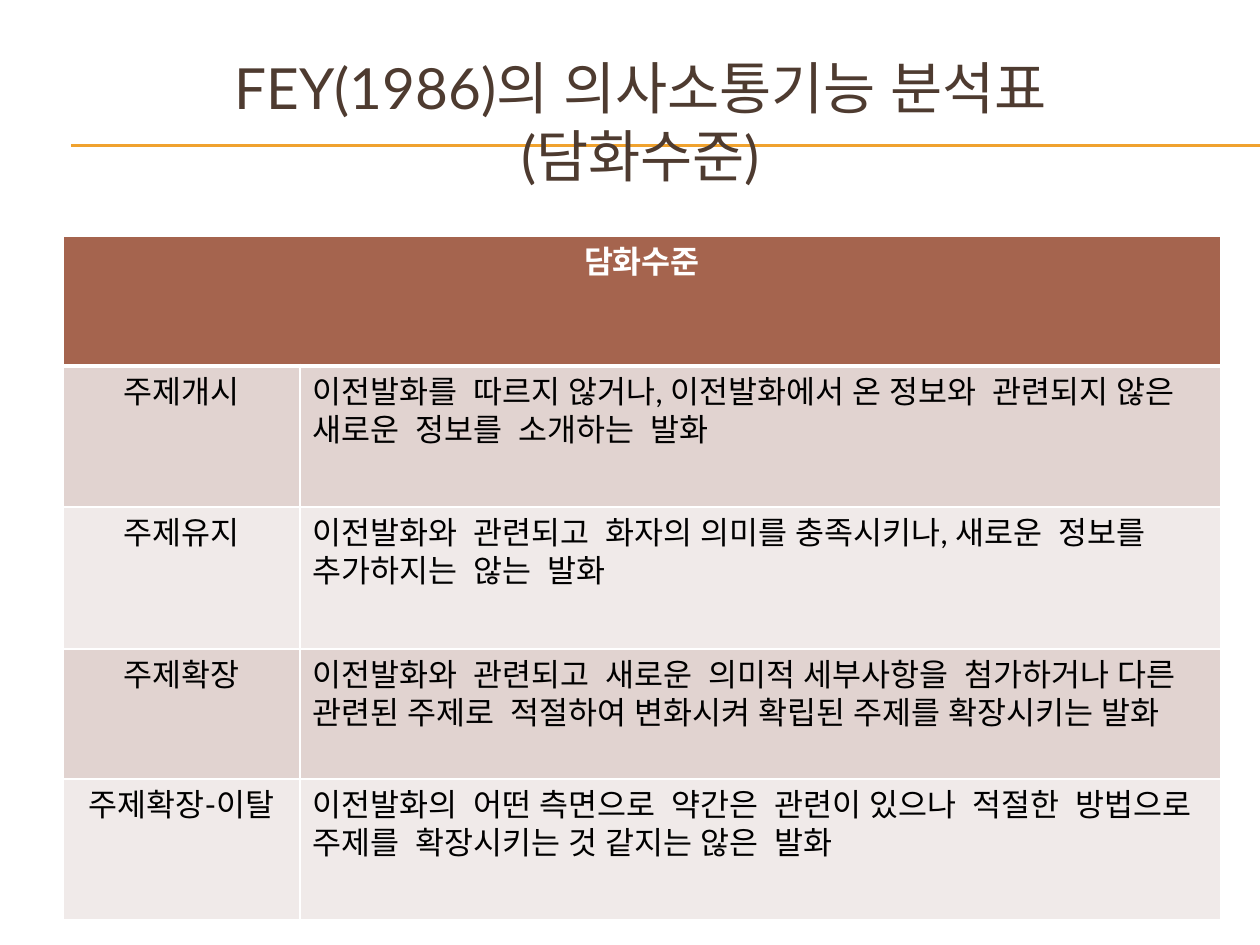
from dataclasses import dataclass

from lxml import etree
from pptx import Presentation
from pptx import util as u
from pptx.dml.color import RGBColor
from pptx.enum import shapes, text
from pptx.oxml.ns import qn

PX = u.Inches(1) // 126
CENTER, LEFT = text.PP_ALIGN.CENTER, text.PP_ALIGN.LEFT


@dataclass(frozen=True)
class Theme:
    font: str = "Lato"
    title: str = "4E3B30"
    rule: str = "F0A22E"
    header: str = "A5644E"
    bands: tuple = ("E1D3D0", "F0EAE9")
    ink: str = "000000"
    white: str = "FFFFFF"
    title_pt: float = 32.4
    body_pt: int = 18
    rule_pt: float = 0.75
    border_pt: int = 1
    header_border_pt: int = 3


class Deck:
    """Holds the theme and the current slide."""

    def __init__(self, theme, width, height):
        self.t = theme
        self.prs = Presentation()
        self.prs.slide_width, self.prs.slide_height = width * PX, height * PX
        self.s = self.prs.slides.add_slide(self.prs.slide_layouts[6])

    def run(self, p, words, size, color, bold=False):
        """Add a run with one font for both Latin and Korean text."""
        r = p.add_run()
        r.text = words
        r.font.name, r.font.size, r.font.bold = self.t.font, u.Pt(size), bold
        r.font.color.rgb = RGBColor.from_string(color)
        etree.SubElement(r._r.get_or_add_rPr(), qn("a:ea"), typeface=self.t.font)

    def rule(self, x1, x2, y):
        ln = self.s.shapes.add_connector(
            shapes.MSO_CONNECTOR.STRAIGHT, x1 * PX, y * PX, x2 * PX, y * PX)
        ln.line.color.rgb = RGBColor.from_string(self.t.rule)
        ln.line.width = u.Pt(self.t.rule_pt)
        etree.SubElement(ln._element.spPr, qn("a:effectLst"))

    def title(self, lines, x, y, w, h):
        tf = self.s.shapes.add_textbox(x * PX, y * PX, w * PX, h * PX).text_frame
        tf.word_wrap = True
        tf.vertical_anchor = text.MSO_ANCHOR.MIDDLE
        p = tf.paragraphs[0]
        p.alignment = CENTER
        for i, line in enumerate(lines):
            if i:
                p.add_line_break()
            self.run(p, line, self.t.title_pt, self.t.title)

    def table(self, x, y, col_widths, row_heights):
        frame = self.s.shapes.add_table(
            len(row_heights), len(col_widths), x * PX, y * PX,
            sum(col_widths) * PX, sum(row_heights) * PX)
        tbl = frame.table
        for col, width in zip(tbl.columns, col_widths):
            col.width = width * PX
        for row, height in zip(tbl.rows, row_heights):
            row.height = height * PX
        return tbl

    def cell(self, cell, fill, words="", color=None, align=LEFT, bold=False,
             bottom_pt=None):
        cell.fill.solid()
        cell.fill.fore_color.rgb = RGBColor.from_string(fill)
        self.borders(cell, bottom_pt or self.t.border_pt)
        if words:
            p = cell.text_frame.paragraphs[0]
            p.alignment = align
            self.run(p, words, self.t.body_pt, color or self.t.ink, bold)

    def borders(self, cell, bottom_pt):
        tc_pr = cell._tc.get_or_add_tcPr()
        for i, side in enumerate("LRTB"):
            width = bottom_pt if side == "B" else self.t.border_pt
            ln = etree.Element(qn(f"a:ln{side}"), w=str(u.Pt(width)))
            fill = etree.SubElement(ln, qn("a:solidFill"))
            etree.SubElement(fill, qn("a:srgbClr"), val=self.t.white)
            tc_pr.insert(i, ln)


HEADER_HEIGHT = 130
# Function, description, row height
FUNCTIONS = [
    ("주제개시", "이전발화를  따르지 않거나, 이전발화에서 온 정보와  관련되지 않은  "
     "새로운  정보를  소개하는  발화", 141),
    ("주제유지", "이전발화와  관련되고  화자의 의미를 충족시키나, 새로운  정보를  "
     "추가하지는  않는  발화", 142),
    ("주제확장", "이전발화와  관련되고  새로운  의미적 세부사항을  첨가하거나 다른  "
     "관련된 주제로  적절하여 변화시켜 확립된 주제를 확장시키는 발화", 130),
    ("주제확장-이탈", "이전발화의  어떤 측면으로  약간은  관련이 있으나  적절한  방법으로  "
     "주제를  확장시키는 것 같지는 않은  발화", 141),
]


def main():
    t = Theme()
    deck = Deck(t, 1260, 945)
    for y in (145, 146):
        deck.rule(71, 1260, y)
    deck.title(["FEY(1986)의 의사소통기능 분석표", "(담화수준)"], 42, 63, 1197, 116)

    heights = [HEADER_HEIGHT] + [height for _, _, height in FUNCTIONS]
    tbl = deck.table(63, 236, [237, 921], heights)
    head, head_rest = tbl.cell(0, 0), tbl.cell(0, 1)
    head.merge(head_rest)
    deck.cell(head, t.header, "담화수준", t.white, CENTER, True, t.header_border_pt)
    deck.cell(head_rest, t.header, bottom_pt=t.header_border_pt)
    for i, (name, description, _) in enumerate(FUNCTIONS):
        fill = t.bands[i % 2]
        deck.cell(tbl.cell(i + 1, 0), fill, name, align=CENTER)
        deck.cell(tbl.cell(i + 1, 1), fill, description)
    deck.prs.save("out.pptx")


if __name__ == "__main__":
    main()
